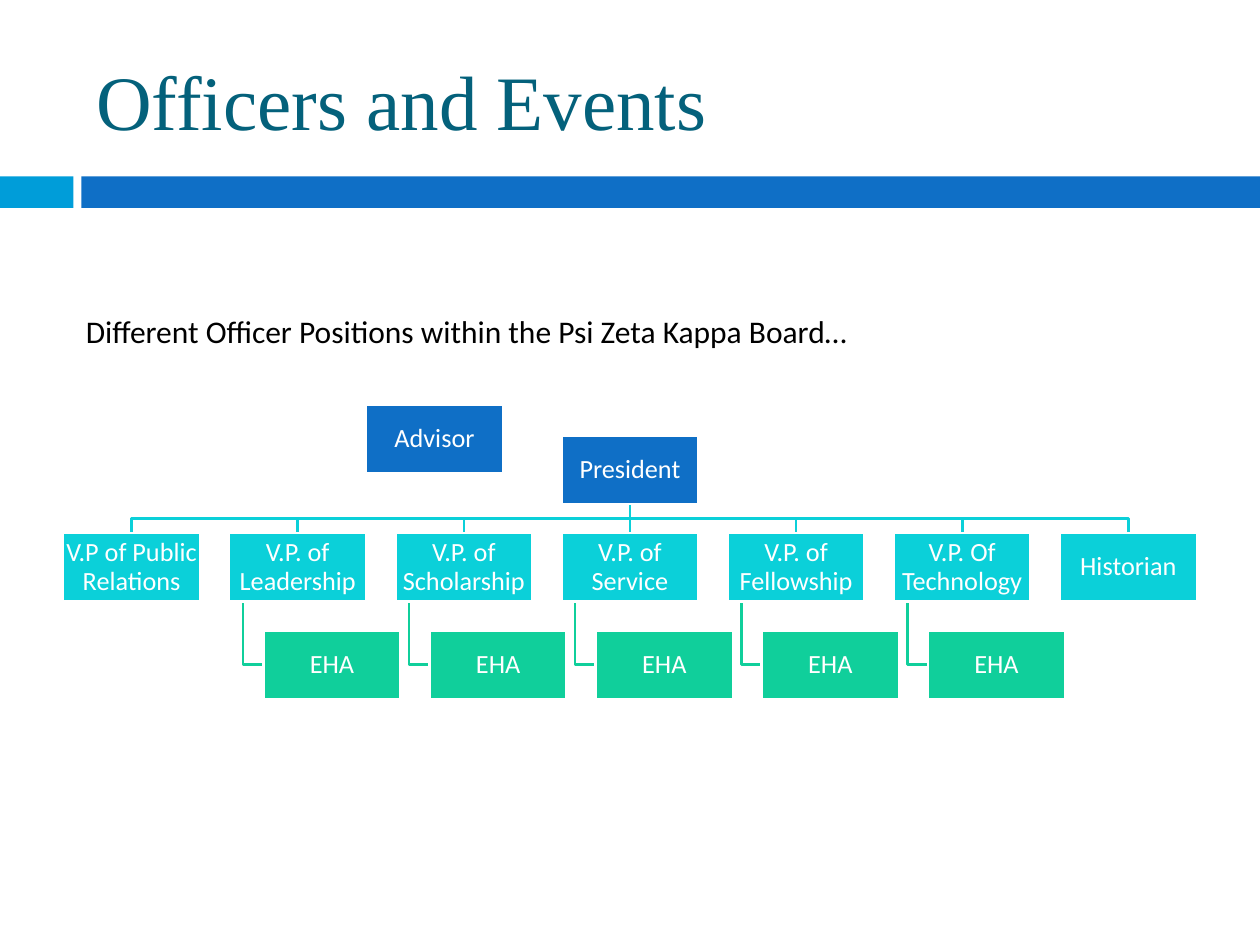
from pptx import Presentation
from pptx.dml.color import RGBColor
from pptx.enum.shapes import MSO_CONNECTOR, MSO_SHAPE
from pptx.enum.text import MSO_ANCHOR, PP_ALIGN
from pptx.oxml.ns import qn
from pptx.util import Pt
from lxml import etree

RECT = MSO_SHAPE.RECTANGLE
LINE = MSO_CONNECTOR.STRAIGHT
MID = MSO_ANCHOR.MIDDLE
TOP = MSO_ANCHOR.TOP
CENTER = PP_ALIGN.CENTER

SKY = RGBColor(0x00, 0x9D, 0xD9)
BLUE = RGBColor(0x0F, 0x6F, 0xC6)
TEAL = RGBColor(0x04, 0x61, 0x7B)
CYAN = RGBColor(0x0B, 0xD0, 0xD9)
GREEN = RGBColor(0x10, 0xCF, 0x9B)
WHITE = RGBColor(0xFF, 0xFF, 0xFF)
BLACK = RGBColor(0, 0, 0)

# Content
TITLE = "Officers and Events"
INTRO = "Different Officer Positions within the Psi Zeta Kappa Board…"
ADVISOR = "Advisor"
HEAD = "President"
EVENT = "EHA"
# (office, has an event box)
TEAM = [
    ("V.P of Public Relations", False),
    ("V.P. of Leadership", True),
    ("V.P. of Scholarship", True),
    ("V.P. of Service", True),
    ("V.P. of Fellowship", True),
    ("V.P. Of Technology", True),
    ("Historian", False),
]

# Layout of the chart
WIDE, TALL = 78.4, 39.2
STEP = 94.92
MIDX = 360
LEFT = MIDX - (len(TEAM) - 1) / 2 * STEP - WIDE / 2
ADV_X, ADV_Y = 209.1, 231.2
HEAD_Y, TEAM_Y, EVENT_Y = 248.9, 304.6, 360.2
BUS_Y = 296.3
STEM, INDENT = 7.85, 19.6

deck = Presentation()
deck.slide_width, deck.slide_height = Pt(720), Pt(540)
slide = deck.slides.add_slide(deck.slide_layouts[6])
shapes = slide.shapes


def style(run, size, color, font="Calibri"):
    run.font.size = Pt(size)
    run.font.name = font
    run.font.color.rgb = color


def rect(x, y, w, h, fill):
    shape = shapes.add_shape(RECT, Pt(x), Pt(y), Pt(w), Pt(h))
    shape.shadow.inherit = False
    shape.fill.solid()
    shape.fill.fore_color.rgb = fill
    shape.line.fill.background()
    return shape


def label(x, y, w, h, text, size, color, font="Calibri", anchor=TOP):
    frame = shapes.add_textbox(Pt(x), Pt(y), Pt(w), Pt(h)).text_frame
    frame.word_wrap = True
    frame.vertical_anchor = anchor
    frame.text = text
    style(frame.paragraphs[0].runs[0], size, color, font)


def box(x, y, text, fill):
    shape = rect(x, y, WIDE, TALL, fill)
    shape.line.color.rgb = WHITE
    shape.line.width = Pt(1.5)
    frame = shape.text_frame
    frame.word_wrap = True
    frame.vertical_anchor = MID
    frame.margin_left = frame.margin_right = Pt(0.75)
    frame.margin_top = frame.margin_bottom = Pt(0.75)
    frame.text = text
    para = frame.paragraphs[0]
    para.alignment = CENTER
    para.line_spacing = 0.9
    style(para.runs[0], 15, WHITE)


def link(points, color):
    spots = [(Pt(x), Pt(y)) for x, y in points]
    if len(spots) == 2:
        shape = shapes.add_connector(LINE, *spots[0], *spots[1])
        etree.SubElement(shape.element.spPr, qn("a:effectLst"))
    else:
        path = shapes.build_freeform(*spots[0])
        path.add_line_segments(spots[1:], close=False)
        shape = path.convert_to_shape()
        shape.shadow.inherit = False
        shape.fill.background()
    shape.line.color.rgb = color
    shape.line.width = Pt(1.5)


# Title and band
rect(0, 100.8, 42, 18, SKY)
rect(46.5, 100.8, 673.5, 18, BLUE)
label(48, 18, 642, 78, TITLE, 44, TEAL, "Times New Roman", MID)

# Links, behind the boxes
lefts = [LEFT + i * STEP for i in range(len(TEAM))]
start = (MIDX, HEAD_Y + TALL)
for x, (name, event) in zip(lefts, TEAM):
    mid = x + WIDE / 2
    bend = [] if abs(mid - MIDX) < 1 else [(MIDX, BUS_Y), (mid, BUS_Y)]
    link([start, *bend, (mid, TEAM_Y)], CYAN)
    if event:
        stem, low = x + STEM, EVENT_Y + TALL / 2
        link([(stem, TEAM_Y + TALL), (stem, low), (x + INDENT, low)], GREEN)

# Boxes
box(ADV_X, ADV_Y, ADVISOR, BLUE)
box(MIDX - WIDE / 2, HEAD_Y, HEAD, BLUE)
for x, (name, event) in zip(lefts, TEAM):
    box(x, TEAM_Y, name, CYAN)
    if event:
        box(x + INDENT, EVENT_Y, EVENT, GREEN)

# Intro line
label(42, 174.5, 570, 29, INTRO, 18, BLACK)

deck.save("out.pptx")
